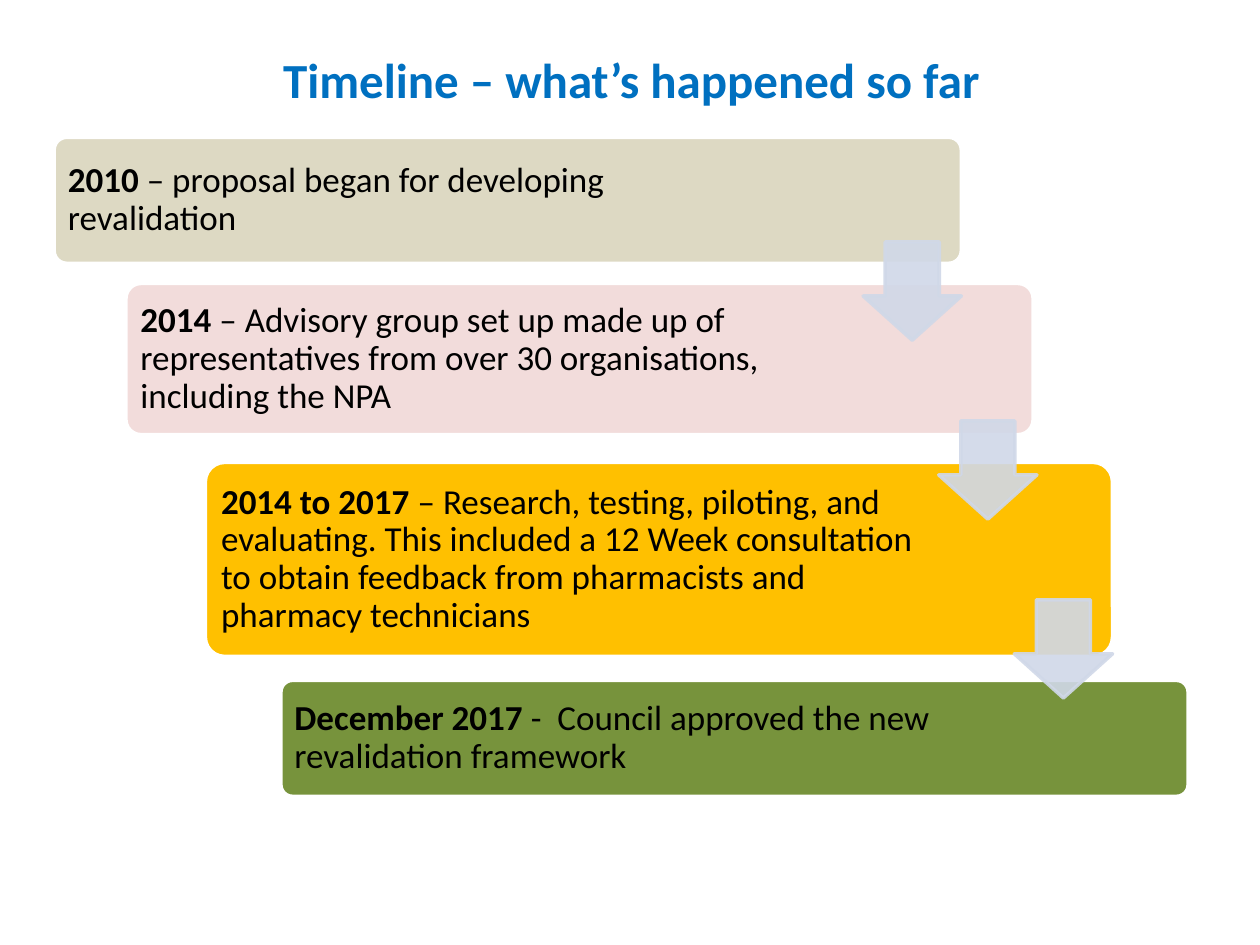
from pptx import Presentation
from pptx.dml.color import RGBColor
from pptx.enum.shapes import MSO_SHAPE as Shape
from pptx.enum.text import MSO_ANCHOR as Anchor, PP_ALIGN as Align
from pptx.oxml.ns import qn
from pptx.util import Inches, Pt
from lxml.etree import SubElement

FONT = "Calibri"
BLUE = RGBColor(0x00, 0x70, 0xC0)
BLACK = RGBColor(0x00, 0x00, 0x00)
WHITE = RGBColor(0xFF, 0xFF, 0xFF)
ARROW = RGBColor(0xD0, 0xD8, 0xE8)
SAND = RGBColor(0xDD, 0xD9, 0xC3)
PINK = RGBColor(0xF2, 0xDC, 0xDB)
AMBER = RGBColor(0xFF, 0xC0, 0x00)
GREEN = RGBColor(0x77, 0x93, 0x3C)

STEPS = [
    (0.43, 1.09, 1.0, SAND, "2010", " – proposal began for developing revalidation"),
    (1.0, 2.25, 1.2, PINK, "2014", " – Advisory group set up made up of representatives "
     "from over 30 organisations, including the NPA"),
    (1.63, 3.67, 1.54, AMBER, "2014 to 2017 ", "– Research, testing, piloting, and evaluating. "
     "This included a 12 Week consultation to obtain feedback from pharmacists "
     "and pharmacy technicians"),
    (2.23, 5.4, 0.92, GREEN, "December 2017 ", "-  Council approved the new revalidation framework"),
]
STEP_WIDTH = 7.2
ARROW_SIZE = 0.78


def style_run(run, size, color, bold):
    """Set the font of one run."""
    run.font.name = FONT
    run.font.size = Pt(size)
    run.font.color.rgb = color
    run.font.bold = bold


def add_title(slide, left, top, width, height):
    """Place the centred slide title."""
    title = slide.shapes.add_textbox(Inches(left), Inches(top), Inches(width), Inches(height))
    frame = title.text_frame
    frame.word_wrap = True
    frame.vertical_anchor = Anchor.MIDDLE
    heading = frame.paragraphs[0]
    heading.text = "Timeline – what’s happened so far"
    heading.alignment = Align.CENTER
    style_run(heading.runs[0], 28, BLUE, True)


def add_block(slide, kind, box, fill, outline):
    """Place a flat filled shape with a two-point outline."""
    block = slide.shapes.add_shape(kind, *(Inches(length) for length in box))
    block.shadow.inherit = False
    block.fill.solid()
    block.fill.fore_color.rgb = fill
    block.line.color.rgb = outline
    block.line.width = Pt(2)
    return block


def add_step(slide, box, fill, date, event):
    """Place one timeline step with its bold date and event."""
    step = add_block(slide, Shape.ROUNDED_RECTANGLE, box, fill, WHITE)
    step.adjustments[0] = 0.1
    frame = step.text_frame
    frame.word_wrap = True
    frame.vertical_anchor = Anchor.MIDDLE
    frame.margin_left = frame.margin_top = frame.margin_bottom = Inches(0.08)
    frame.margin_right = Inches(1.45)
    entry = frame.paragraphs[0]
    entry.alignment = Align.LEFT
    entry.line_spacing = 0.9
    for words, bold in ((date, True), (event, False)):
        run = entry.add_run()
        run.text = words
        style_run(run, 20, BLACK, bold)


def add_arrow(slide, box):
    """Place a translucent arrow leading to the next step."""
    arrow = add_block(slide, Shape.DOWN_ARROW, box, ARROW, ARROW)
    arrow.adjustments[0] = 0.55
    arrow.adjustments[1] = 0.45
    for color in arrow.element.spPr.iter(qn("a:srgbClr")):
        SubElement(color, qn("a:alpha")).set("val", "90000")


def add_timeline(slide):
    """Place the staircase of steps and the arrows between them."""
    for left, top, height, fill, date, event in STEPS:
        add_step(slide, (left, top, STEP_WIDTH, height), fill, date, event)
    for index in range(len(STEPS) - 1):
        add_arrow(slide, (6.85 + 0.6 * index, 1.92 + 1.42 * index, ARROW_SIZE, ARROW_SIZE))


def main():
    """Build and save the timeline slide."""
    deck = Presentation()
    deck.slide_width, deck.slide_height = Inches(10), Inches(7.5)
    slide = deck.slides.add_slide(deck.slide_layouts[6])
    add_title(slide, 0.51, 0, 9, 1.25)
    add_timeline(slide)
    deck.save("out.pptx")


if __name__ == "__main__":
    main()
